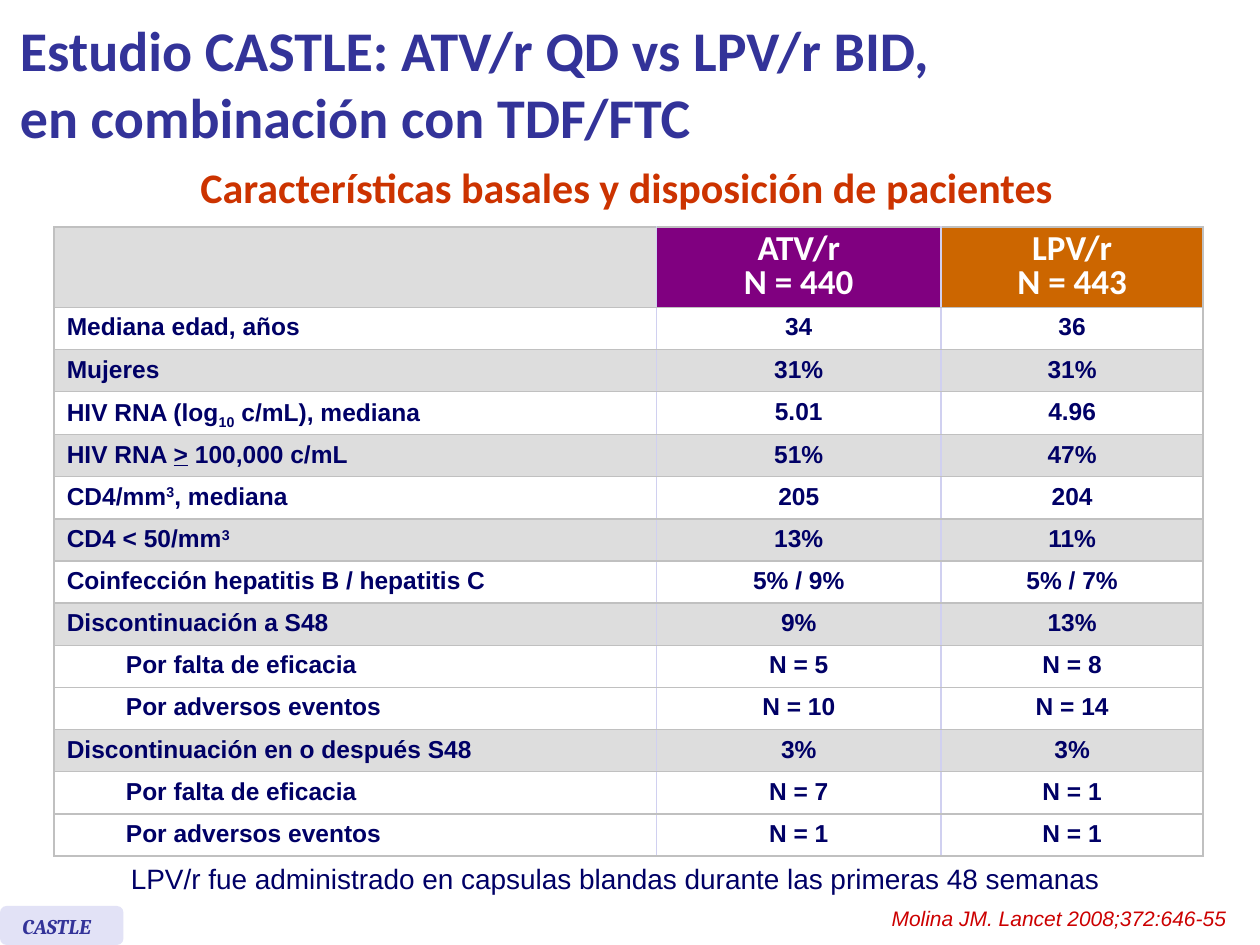
from lxml import etree
from pptx import Presentation
from pptx.dml.color import RGBColor
from pptx.enum import shapes, text
from pptx.oxml.ns import qn
from pptx.util import Inches, Pt

COLORS = {"navy": "000066", "indigo": "333399", "rust": "CC3300", "red": "CC0000",
          "purple": "800080", "orange": "CC6600", "white": "FFFFFF", "band": "DDDDDD",
          "grid": "C0C0C0", "divider": "D0D0F0", "tag": "E2E2F6"}

TITLE = "Estudio CASTLE: ATV/r QD vs LPV/r BID,\ven combinación con TDF/FTC"
SUBTITLE = "Características basales y disposición de pacientes"
FOOTNOTE = "LPV/r fue administrado en capsulas blandas durante las primeras 48 semanas"
CITATION = "Molina JM. Lancet 2008;372:646-55 "
STUDY = "CASTLE"

ARMS = [("ATV/r\vN = 440", "purple"), ("LPV/r\vN = 443", "orange")]
MAIN, SUB = "main", "sub"
BASELINE = [
    (MAIN, [("Mediana edad, años", {})], "34", "36"),
    (MAIN, [("Mujeres", {})], "31%", "31%"),
    (MAIN, [("HIV RNA (log", {}), ("10", {"baseline": "-25000"}),
            (" c/mL), mediana", {})], "5.01", "4.96"),
    (MAIN, [("HIV RNA ", {}), (">", {"u": "sng"}), (" 100,000 c/mL", {})], "51%", "47%"),
    (MAIN, [("CD4/mm", {}), ("3", {"baseline": "30000"}), (", mediana", {})], "205", "204"),
    (MAIN, [("CD4 < 50/mm", {}), ("3", {"baseline": "30000"})], "13%", "11%"),
    (MAIN, [("Coinfección hepatitis B / hepatitis C", {})], "5% / 9%", "5% / 7%"),
    (MAIN, [("Discontinuación a S48", {})], "9%", "13%"),
    (SUB, [("Por falta de eficacia", {})], "N = 5", "N = 8"),
    (SUB, [("Por adversos eventos", {})], "N = 10", "N = 14"),
    (MAIN, [("Discontinuación en o después S48", {})], "3%", "3%"),
    (SUB, [("Por falta de eficacia", {})], "N = 7", "N = 1"),
    (SUB, [("Por adversos eventos", {})], "N = 1", "N = 1"),
]
BANDED = {2, 4, 6, 8, 11}
COLUMN_WIDTHS = [0.47, 4.31, 2.26, 2.08]
TABLE_HEIGHT, HEADER_HEIGHT, SHORT_ROW, SHORT_HEIGHT = 4.97, 0.64, 9, 0.31


def rgb(name):
    return RGBColor.from_string(COLORS[name])


def style(paragraph, size, face, color, bold=False, italic=False):
    for run in paragraph.runs:
        font = run.font
        font.size, font.name, font.bold, font.italic = Pt(size), face, bold, italic
        font.color.rgb = rgb(color)


def add_label(parent, box, wording, size, face, color, bold=False, italic=False,
              align=text.PP_ALIGN.LEFT, wrap=True):
    frame = parent.add_textbox(*map(Inches, box)).text_frame
    frame.word_wrap = wrap
    paragraph = frame.paragraphs[0]
    paragraph.text = wording
    paragraph.alignment = align
    style(paragraph, size, face, color, bold, italic)
    return frame


def paint(cell, fill, left, right):
    properties = cell._tc.get_or_add_tcPr()
    for side, color in (("L", left), ("R", right), ("T", "grid"), ("B", "grid")):
        line = etree.SubElement(properties, qn(f"a:ln{side}"), w=str(Pt(1)))
        if color:
            solid = etree.SubElement(line, qn("a:solidFill"))
            etree.SubElement(solid, qn("a:srgbClr"), val=COLORS[color])
        else:
            etree.SubElement(line, qn("a:noFill"))
    cell.fill.solid()
    cell.fill.fore_color.rgb = rgb(fill)
    cell.vertical_anchor = text.MSO_ANCHOR.MIDDLE


def write(cell, runs, size, face, color, spacing, align):
    paragraph = cell.text_frame.paragraphs[0]
    if len(runs) == 1:
        paragraph.text = runs[0][0]
    else:
        for wording, marks in runs:
            run = paragraph.add_run()
            run.text = wording
            for key, value in marks.items():
                run.font._element.set(key, value)
    paragraph.alignment = align
    paragraph.line_spacing = spacing
    style(paragraph, size, face, color, bold=True)


def add_baseline_table(slide):
    count = len(BASELINE) + 1
    table = slide.shapes.add_table(count, len(COLUMN_WIDTHS), Inches(0.43), Inches(1.8),
                                   Inches(sum(COLUMN_WIDTHS)), Inches(TABLE_HEIGHT)).table
    table.first_row = table.horz_banding = False
    for column, width in zip(table.columns, COLUMN_WIDTHS):
        column.width = Inches(width)
    regular = (TABLE_HEIGHT - HEADER_HEIGHT - SHORT_HEIGHT) / (count - 2)
    special = {0: HEADER_HEIGHT, SHORT_ROW: SHORT_HEIGHT}
    for index, row in enumerate(table.rows):
        row.height = Inches(special.get(index, regular))

    center, left = text.PP_ALIGN.CENTER, text.PP_ALIGN.LEFT
    header = (MAIN, [], *(name for name, _ in ARMS))
    for r, (level, label, *values) in enumerate([header] + BASELINE):
        fill = "band" if r == 0 or r in BANDED else "white"
        inner = "divider" if level == MAIN else None
        fills = [fill, fill] + ([color for _, color in ARMS] if r == 0 else [fill, fill])
        edges = [("grid", inner), (None, "divider"), ("divider", "divider"), ("divider", "grid")]
        for c, (cell_fill, sides) in enumerate(zip(fills, edges)):
            paint(table.cell(r, c), cell_fill, *sides)
        if level == MAIN:
            table.cell(r, 0).merge(table.cell(r, 1))
        if label:
            write(table.cell(r, 0 if level == MAIN else 1), label, 14, "Arial", "navy", 0.9, left)
        look = (20, "Calibri", "white", 0.8) if r == 0 else (14, "Arial", "navy", 0.9)
        for c, value in enumerate(values, 2):
            write(table.cell(r, c), [(value, {})], *look, center)
        for c in (0, 1):
            paragraph = table.cell(r, c).text_frame.paragraphs[0]
            if not paragraph.runs:
                etree.SubElement(paragraph._p, qn("a:endParaRPr"), sz="1400")


def main():
    deck = Presentation()
    deck.slide_width, deck.slide_height = Inches(10), Inches(7.5)
    slide = deck.slides.add_slide(deck.slide_layouts[6])

    badge = slide.shapes.add_group_shape().shapes
    tag = badge.add_shape(shapes.MSO_SHAPE.ROUNDED_RECTANGLE,
                          *map(Inches, (0, 7.19, 0.98, 0.31)))
    tag.shadow.inherit = False
    tag.fill.solid()
    tag.fill.fore_color.rgb = rgb("tag")
    tag.line.fill.background()
    add_label(badge, (0.08, 7.2, 0.88, 0.3), STUDY, 12, "Cambria", "indigo",
              bold=True, italic=True)

    title = add_label(slide.shapes, (0.06, 0.05, 8.96, 1.21), TITLE, 32, "Calibri",
                      "indigo", bold=True)
    title.vertical_anchor = text.MSO_ANCHOR.MIDDLE
    add_baseline_table(slide)
    subtitle = add_label(slide.shapes, (1.06, 1.42, 7.83, 0.31), SUBTITLE, 24, "Calibri",
                         "rust", bold=True, align=text.PP_ALIGN.CENTER)
    subtitle.paragraphs[0].line_spacing = Pt(15.2)
    add_label(slide.shapes, (0.94, 6.79, 7.91, 0.37), FOOTNOTE, 16, "Arial", "navy", wrap=False)
    add_label(slide.shapes, (6.88, 7.14, 3, 0.3), CITATION, 12, "Arial", "red",
              italic=True, align=text.PP_ALIGN.RIGHT)
    deck.save("out.pptx")


if __name__ == "__main__":
    main()
